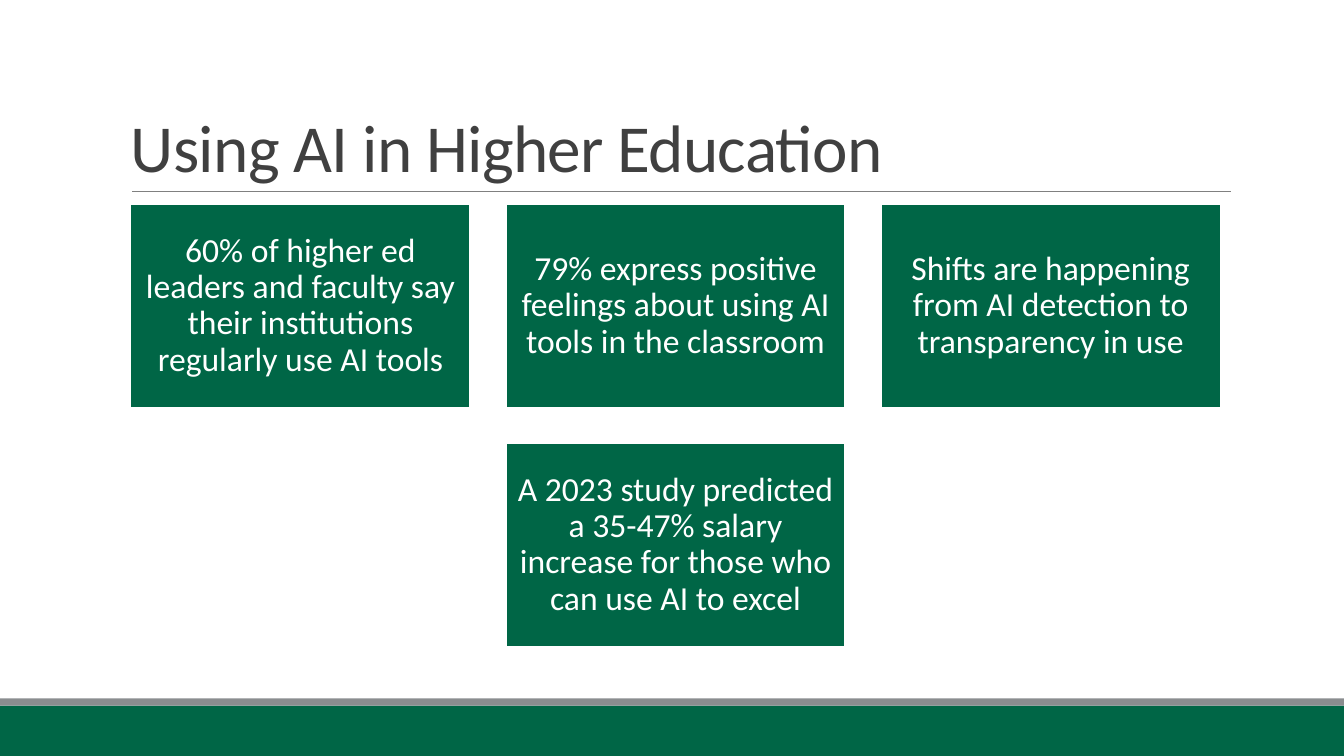
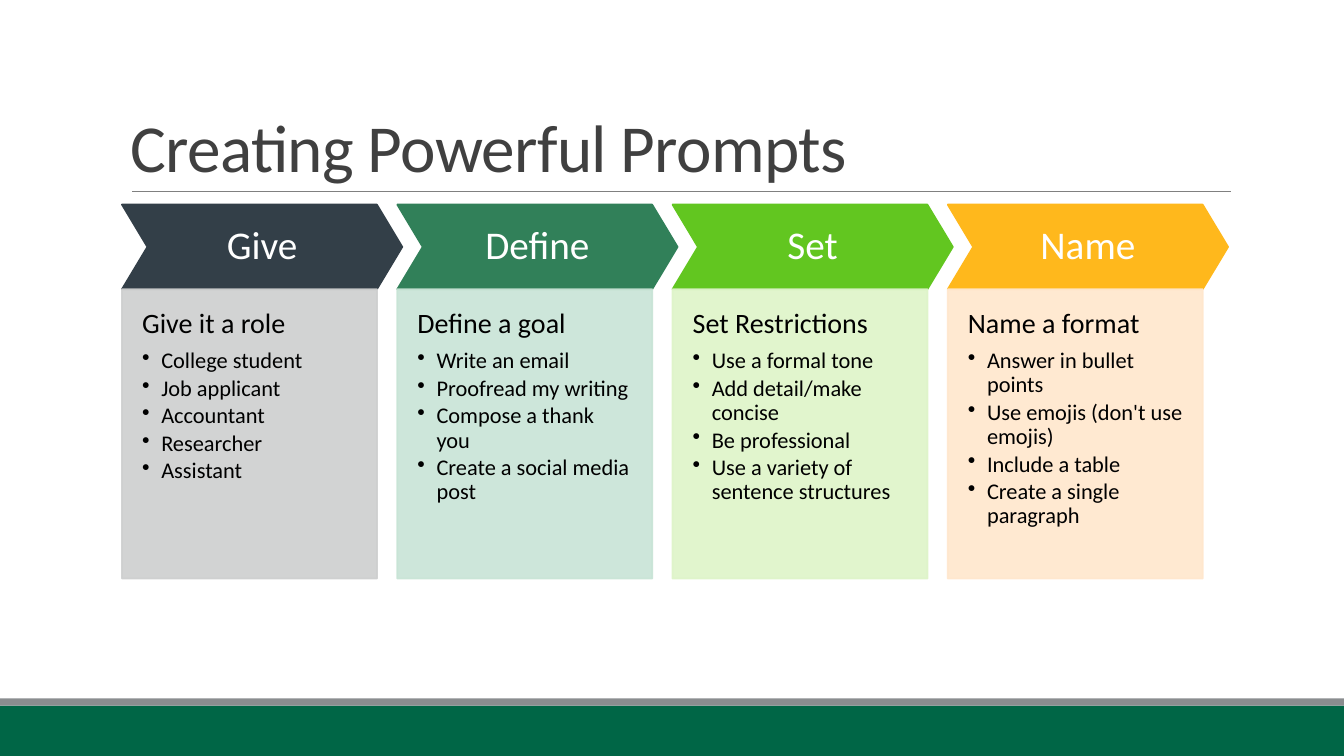
import dataclasses
import typing

import lxml.etree
import pptx
import pptx.dml.color
import pptx.enum.shapes
import pptx.enum.text
import pptx.oxml.ns
import pptx.util

SLIDE_WIDTH, SLIDE_HEIGHT = 13.33, 7.5
FONT = "Calibri"
GREEN, GRAY, RULE_GRAY = "006646", "8A8D8F", "808080"
TITLE_COLOR, WHITE, BLACK = "404040", "FFFFFF", "000000"

SHAPES = pptx.enum.shapes.MSO_SHAPE
ALIGN = pptx.enum.text.PP_ALIGN
ANCHOR = pptx.enum.text.MSO_ANCHOR


@dataclasses.dataclass(frozen=True)
class Box:
    left: float
    top: float
    width: float
    height: float

    def lengths(self) -> list[pptx.util.Length]:
        return [pptx.util.Inches(value) for value in dataclasses.astuple(self)]


@dataclasses.dataclass(frozen=True)
class Grid:
    """Equal cells; the pitch is the step from one cell to the next."""
    left: float
    top: float
    cell_width: float
    cell_height: float
    column_pitch: float
    row_pitch: float = 0

    def cell(self, column: float, row: float = 0) -> Box:
        return Box(self.left + column * self.column_pitch,
                   self.top + row * self.row_pitch,
                   self.cell_width, self.cell_height)


@dataclasses.dataclass(frozen=True)
class TextStyle:
    size: float
    color: str
    line_spacing: float = 0.9
    align: typing.Any = ALIGN.LEFT
    space_after: float = 0
    tracking: float = 0
    bullet_indent: float = 0


@dataclasses.dataclass(frozen=True)
class Step:
    name: str
    heading: str
    points: tuple[str, ...]
    color: str
    tint: str


TITLE = TextStyle(48, TITLE_COLOR, line_spacing=0.85, tracking=-0.5)
CARD_TEXT = TextStyle(24, WHITE, align=ALIGN.CENTER)
STEP_NAME = TextStyle(28, WHITE, align=ALIGN.CENTER)
STEP_HEADING = TextStyle(20, BLACK, space_after=7)
STEP_POINT = TextStyle(16, BLACK, space_after=2.4, bullet_indent=0.19)

CARD_COLUMNS = 3
CARD_GRID = Grid(1.29, 2.02, 3.38, 2.03, 3.72, 2.37)
CARDS = (
    "60% of higher ed leaders and faculty say their institutions regularly use AI tools",
    "79% express positive feelings about using AI tools in the classroom",
    "Shifts are happening from AI detection to transparency in use",
    "A 2023 study predicted a 35-47% salary increase for those who can use AI to excel",
)

CHEVRON_GRID = Grid(1.21, 2.03, 2.78, 0.84, 2.73)
PANEL_GRID = Grid(1.21, 2.87, 2.53, 2.87, 2.73)
STEPS = (
    Step("Give", "Give it a role",
         ("College student", "Job applicant", "Accountant", "Researcher", "Assistant"),
         "333F48", "CECFCF"),
    Step("Define", "Define a goal",
         ("Write an email", "Proofread my writing", "Compose a thank you",
          "Create a social media post"),
         "318059", "C8E4D6"),
    Step("Set", "Set Restrictions",
         ("Use a formal tone", "Add detail/make concise", "Be professional",
          "Use a variety of sentence structures"),
         "62C620", "DEF4C8"),
    Step("Name", "Name a format",
         ("Answer in bullet points", "Use emojis (don't use emojis)",
          "Include a table", "Create a single paragraph"),
         "FFB81C", "FFE7CD"),
)


def rgb(color: str) -> pptx.dml.color.RGBColor:
    return pptx.dml.color.RGBColor.from_string(color)


def set_attributes(target: typing.Any, values: dict[str, typing.Any]) -> None:
    for name, value in values.items():
        setattr(target, name, value)


def add_child(parent: typing.Any, tag: str, **attributes: str) -> None:
    element = lxml.etree.SubElement(parent, pptx.oxml.ns.qn(tag))
    for name, value in attributes.items():
        element.set(name, value)


def add_shape(slide: typing.Any, kind: typing.Any, box: Box, fill: str,
              line: str | None = None, line_width: float = 0,
              opacity: int = 100) -> typing.Any:
    shape = slide.shapes.add_shape(kind, *box.lengths())
    shape.shadow.inherit = False
    shape.fill.solid()
    shape.fill.fore_color.rgb = rgb(fill)
    if line:
        shape.line.color.rgb = rgb(line)
        shape.line.width = pptx.util.Pt(line_width)
    else:
        shape.line.fill.background()
    if opacity < 100:
        for color in shape.element.spPr.iter(pptx.oxml.ns.qn("a:srgbClr")):
            add_child(color, "a:alpha", val=str(opacity * 1000))
    return shape


def write_text(shape: typing.Any, lines: list[tuple[str, TextStyle]],
               anchor: typing.Any, margins: tuple[float, float, float, float]) -> None:
    """Fill a shape with styled paragraphs; margins run left, top, right, bottom."""
    frame = shape.text_frame
    sides = ("margin_left", "margin_top", "margin_right", "margin_bottom")
    set_attributes(frame, {"word_wrap": True, "vertical_anchor": anchor}
                   | dict(zip(sides, map(pptx.util.Inches, margins))))
    for index, (text, style) in enumerate(lines):
        paragraph = frame.add_paragraph() if index else frame.paragraphs[0]
        if style.bullet_indent:
            indent = pptx.util.Inches(style.bullet_indent)
            properties = paragraph._p.get_or_add_pPr()
            properties.set("marL", str(indent))
            properties.set("indent", str(-indent))
            add_child(properties, "a:buChar", char="•")
        set_attributes(paragraph, {
            "alignment": style.align,
            "line_spacing": style.line_spacing,
            "space_after": pptx.util.Pt(style.space_after),
        })
        run = paragraph.add_run()
        run.text = text
        set_attributes(run.font, {"name": FONT, "size": pptx.util.Pt(style.size)})
        run.font.color.rgb = rgb(style.color)
        if style.tracking:
            run.font._element.set("spc", str(round(style.tracking * 100)))


def add_base_slide(presentation: typing.Any, title: str) -> typing.Any:
    """Add a blank slide with the shared footer bands, title and rule."""
    slide = presentation.slides.add_slide(presentation.slide_layouts[6])
    for top, height, color in ((7, 0.5, GREEN), (6.93, 0.07, GRAY)):
        add_shape(slide, SHAPES.RECTANGLE, Box(0, top, SLIDE_WIDTH, height), color)
    rule = slide.shapes.add_connector(
        pptx.enum.shapes.MSO_CONNECTOR.STRAIGHT,
        *map(pptx.util.Inches, (1.31, 1.9, 12.21, 1.9)))
    rule.line.color.rgb = rgb(RULE_GRAY)
    rule.line.width = pptx.util.Pt(0.5)
    add_child(rule._element.spPr, "a:effectLst")
    title_box = slide.shapes.add_textbox(*Box(1.2, 0.31, 11, 1.59).lengths())
    write_text(title_box, [(title, TITLE)], ANCHOR.BOTTOM, (0.1, 0.05, 0.1, 0.05))
    return slide


def add_cards(slide: typing.Any) -> None:
    """Lay the cards out in rows, centring a row that is not full."""
    for index, text in enumerate(CARDS):
        row, column = divmod(index, CARD_COLUMNS)
        in_row = min(CARD_COLUMNS, len(CARDS) - row * CARD_COLUMNS)
        box = CARD_GRID.cell(column + (CARD_COLUMNS - in_row) / 2, row)
        card = add_shape(slide, SHAPES.RECTANGLE, box, GREEN, WHITE, 2)
        write_text(card, [(text, CARD_TEXT)], ANCHOR.MIDDLE, (0.1,) * 4)


def add_steps(slide: typing.Any) -> None:
    for column, step in enumerate(STEPS):
        chevron = add_shape(slide, SHAPES.CHEVRON, CHEVRON_GRID.cell(column),
                            step.color, step.color, 1.25)
        chevron.adjustments[0] = 0.3
        write_text(chevron, [(step.name, STEP_NAME)], ANCHOR.MIDDLE, (0.1,) * 4)
        panel = add_shape(slide, SHAPES.RECTANGLE, PANEL_GRID.cell(column),
                          step.tint, step.tint, 1.25, opacity=90)
        lines = [(step.heading, STEP_HEADING)]
        lines += [(point, STEP_POINT) for point in step.points]
        write_text(panel, lines, ANCHOR.TOP, (0.2, 0.2, 0.2, 0.4))


def main() -> None:
    presentation = pptx.Presentation()
    presentation.slide_width = pptx.util.Inches(SLIDE_WIDTH)
    presentation.slide_height = pptx.util.Inches(SLIDE_HEIGHT)
    add_cards(add_base_slide(presentation, "Using AI in Higher Education"))
    add_steps(add_base_slide(presentation, "Creating Powerful Prompts"))
    presentation.save("out.pptx")


if __name__ == "__main__":
    main()
